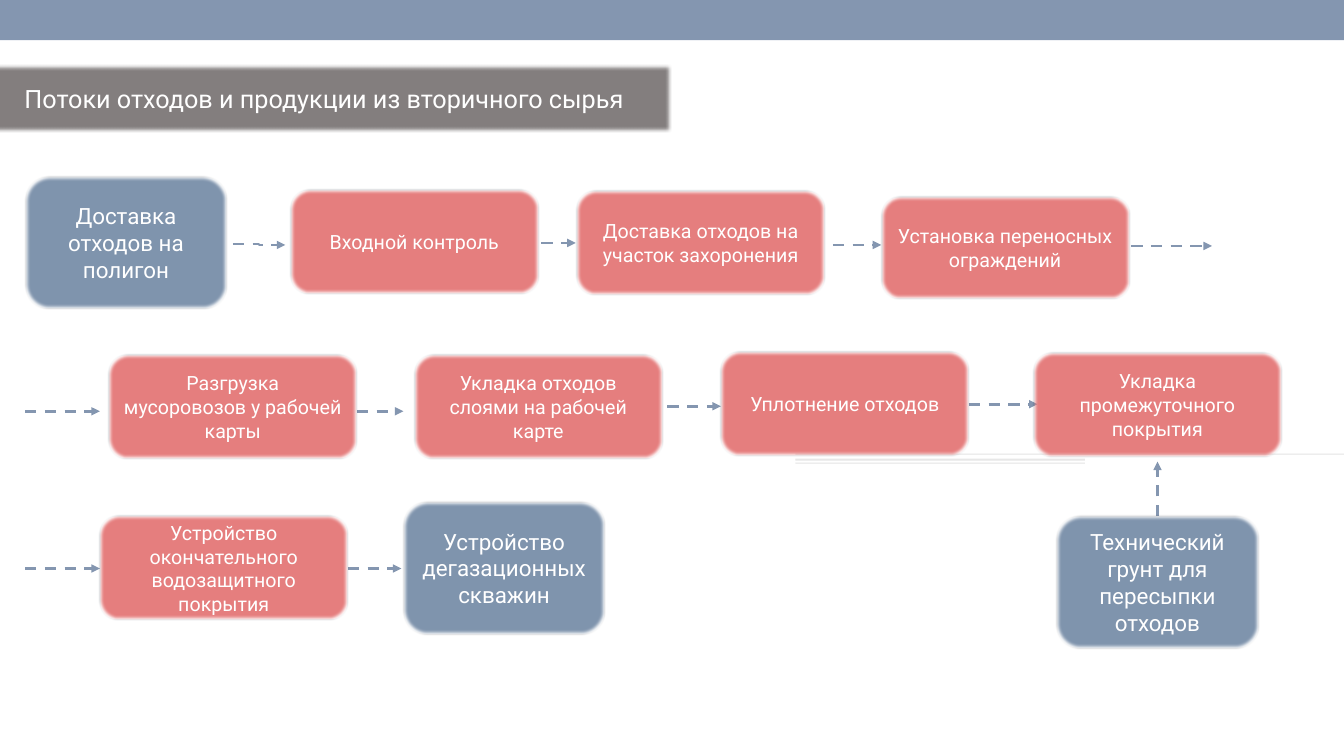
from dataclasses import dataclass

from lxml import etree
from pptx import Presentation
from pptx import util as u
from pptx.dml import color
from pptx.enum import dml, shapes, text
from pptx.oxml import ns

PX = 9144  # 100 px to the inch
FONT = "Roboto"
WHITE, STEEL, BLUE, RED = "FFFFFF", "8496B0", "738AA6", "E47171"
GREY, PALE, OUTLINE = "767171", "D7D7D7", "262F3B"


@dataclass(frozen=True)
class Bar:
    x: int
    y: int
    w: int
    h: int
    fill: str
    opacity: int = 100


@dataclass(frozen=True)
class Kind:
    w: int
    h: int
    fill: str
    size: int


@dataclass(frozen=True)
class Box:
    x: int
    y: int
    label: str
    kind: Kind


@dataclass(frozen=True)
class Arrow:
    x1: int
    y1: int
    x2: int
    y2: int


STEP = Kind(246, 103, RED, 14)
LOW_STEP = Kind(246, 101, RED, 14)
ENDPOINT = Kind(200, 131, BLUE, 16)

BARS = [
    Bar(789, 450, 544, 1, PALE, 65),
    Bar(789, 455, 287, 2, PALE, 60),
    Bar(789, 459, 287, 1, PALE, 65),
    Bar(0, 0, 1333, 40, STEEL),
]

ARROWS = [
    # First row
    Arrow(231, 242, 283, 243),
    Arrow(537, 241, 571, 241),
    Arrow(826, 243, 874, 243),
    Arrow(1122, 244, 1202, 244),
    # Second row
    Arrow(25, 408, 99, 408),
    Arrow(354, 408, 400, 408),
    Arrow(662, 403, 715, 403),
    Arrow(961, 401, 1029, 401),
    # Third row
    Arrow(25, 564, 99, 564),
    Arrow(345, 564, 398, 564),
    Arrow(1148, 512, 1148, 458),
]

BOXES = [
    # First row
    Box(25, 175, "Доставка отходов на полигон", ENDPOINT),
    Box(288, 188, "Входной контроль", STEP),
    Box(572, 189, "Доставка отходов на участок захоронения", STEP),
    Box(874, 195, "Установка переносных ограждений", LOW_STEP),
    # Second row
    Box(108, 352, "Разгрузка мусоровозов у рабочей карты", STEP),
    Box(411, 352, "Укладка отходов слоями на рабочей карте", STEP),
    Box(715, 349, "Уплотнение отходов", STEP),
    Box(1025, 350, "Укладка промежуточного покрытия", STEP),
    # Third row
    Box(99, 512, "Устройство окончательного водозащитного покрытия", STEP),
    Box(400, 498, "Устройство дегазационных скважин", ENDPOINT),
    Box(1048, 512, "Технический грунт для пересыпки отходов", ENDPOINT),
]


def px(n: int) -> u.Emu:
    return u.Emu(n * PX)


def rgb(value: str) -> color.RGBColor:
    return color.RGBColor.from_string(value)


def paint(sp, fill: str, opacity: int = 100) -> None:
    sp.fill.solid()
    sp.fill.fore_color.rgb = rgb(fill)
    sp.shadow.inherit = False
    if opacity < 100:
        clr = sp.fill._xPr.find(".//" + ns.qn("a:srgbClr"))
        etree.SubElement(clr, ns.qn("a:alpha"), val=str(opacity * 1000))


def soften(sp) -> None:
    effects = sp._element.spPr.find(ns.qn("a:effectLst"))
    etree.SubElement(effects, ns.qn("a:softEdge"), rad="31750")


def write(sp, label: str, size: int) -> None:
    tf = sp.text_frame
    tf.text = label
    tf.word_wrap = True
    tf.auto_size = text.MSO_AUTO_SIZE.NONE
    tf.vertical_anchor = text.MSO_ANCHOR.MIDDLE
    p = tf.paragraphs[0]
    p.alignment = text.PP_ALIGN.CENTER
    r = p.runs[0]
    r.font.size = u.Pt(size)
    r.font.name = FONT
    r.font.color.rgb = rgb(WHITE)


def draw_bar(s, bar: Bar) -> None:
    sp = s.shapes.add_shape(shapes.MSO_SHAPE.RECTANGLE,
                            px(bar.x), px(bar.y), px(bar.w), px(bar.h))
    paint(sp, bar.fill, bar.opacity)
    sp.line.fill.background()


def draw_title(s, label: str) -> None:
    sp = s.shapes.title
    sp.left, sp.top, sp.width, sp.height = px(-11), px(64), px(677), px(68)
    paint(sp, GREY, 90)
    soften(sp)
    write(sp, label, 18)
    sp.text_frame.margin_right = px(22)


def draw_arrow(s, arrow: Arrow) -> None:
    straight = arrow.x1 == arrow.x2 or arrow.y1 == arrow.y2
    kind = shapes.MSO_CONNECTOR.STRAIGHT if straight else shapes.MSO_CONNECTOR.ELBOW
    sp = s.shapes.add_connector(kind, px(arrow.x1), px(arrow.y1),
                                px(arrow.x2), px(arrow.y2))
    sp.line.color.rgb = rgb(STEEL)
    sp.line.width = u.Pt(2)
    sp.line.dash_style = dml.MSO_LINE.DASH
    etree.SubElement(sp.line._get_or_add_ln(), ns.qn("a:tailEnd"), type="triangle")
    etree.SubElement(sp._element.spPr, ns.qn("a:effectLst"))


def draw_box(s, box: Box) -> None:
    sp = s.shapes.add_shape(shapes.MSO_SHAPE.ROUNDED_RECTANGLE,
                            px(box.x), px(box.y), px(box.kind.w), px(box.kind.h))
    paint(sp, box.kind.fill, 90)
    sp.line.color.rgb = rgb(OUTLINE)
    sp.line.width = u.Pt(1.5)
    soften(sp)
    write(sp, box.label, box.kind.size)


def main() -> None:
    prs = Presentation()
    prs.slide_width, prs.slide_height = px(1333), px(750)
    s = prs.slides.add_slide(prs.slide_layouts[5])

    # Background bars and heading
    for bar in BARS:
        draw_bar(s, bar)
    draw_title(s, "Потоки отходов и продукции из вторичного сырья")

    # Process flow
    for arrow in ARROWS:
        draw_arrow(s, arrow)
    for box in BOXES:
        draw_box(s, box)

    prs.save("out.pptx")


if __name__ == "__main__":
    main()
